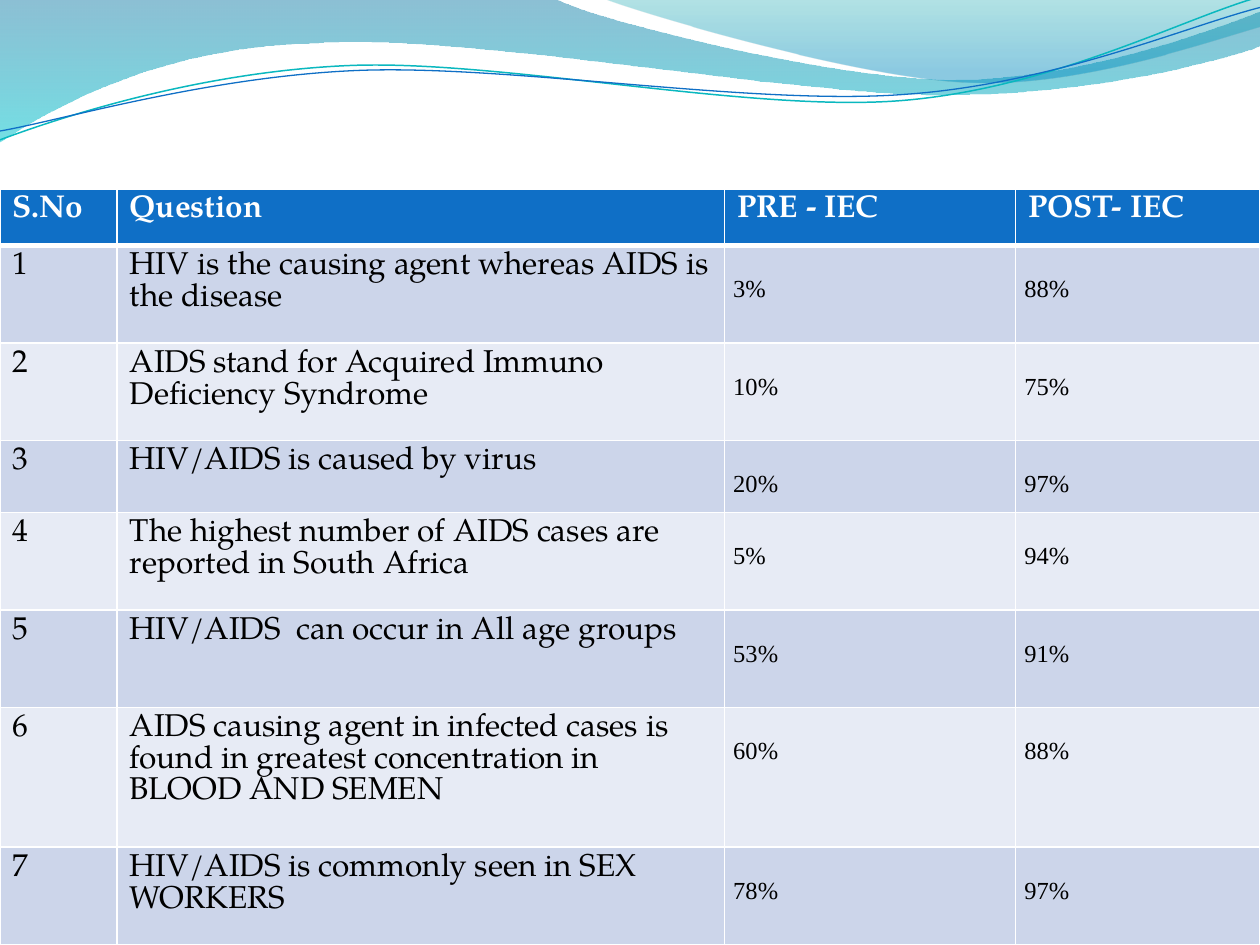
from math import cos, radians, sin

from lxml.etree import SubElement
from pptx import Presentation
from pptx.dml.color import RGBColor
from pptx.enum.text import MSO_ANCHOR
from pptx.oxml.ns import qn
from pptx.util import Inches, Pt

THEME = {
    "teal": "0AB8BF", "blue": "0F6FC6", "white": "FFFFFF", "black": "000000",
    "bands": ("E7EBF5", "CCD5EA"),
    "question_font": "TeX Gyre Pagella", "question_size": 18,
    "result_font": "Times New Roman", "result_size": 14,
}


def draw_curve(shapes, start, segments, close, center=(0, 0), tilt=0):
    coordinates = [start]
    for segment in segments:
        coordinates += zip(segment[::2], segment[1::2])
    cx, cy = center
    turn_cos, turn_sin = cos(radians(tilt)), sin(radians(tilt))
    corners = [(Inches(cx + (x - cx) * turn_cos + (y - cy) * turn_sin),
                Inches(cy - (x - cx) * turn_sin + (y - cy) * turn_cos))
               for x, y in coordinates]
    builder = shapes.build_freeform(*corners[0])
    builder.add_line_segments(corners[1:], close=close)
    curve = builder.convert_to_shape()
    curve.shadow.inherit = False
    curve.rotation = tilt
    steps = iter(list(curve._element.spPr.iter(qn("a:lnTo"))))
    for segment in segments:
        first = next(steps)
        if len(segment) == 6:
            first.tag = qn("a:cubicBezTo")
            for control in (next(steps), next(steps)):
                first.append(control[0])
                control.getparent().remove(control)
    return curve


def add_border(cell, side, width):
    border = SubElement(cell._tc.get_or_add_tcPr(), qn(f"a:{side}"), w=str(Pt(width)))
    paint = SubElement(border, qn("a:solidFill"))
    SubElement(paint, qn("a:srgbClr"), val=THEME["white"])


prs = Presentation()
prs.slide_width, prs.slide_height = Inches(10), Inches(7.5)
slide = prs.slides.add_slide(prs.slide_layouts[6])

waves = [
    ((0, 0),
     [(4.4, -0.01), (4.76, 0.17, 6.64, 0.63, 7.58, 0.63),
      (8.53, 0.63, 9.58, 0.26, 10, 0.09), (10.01, 0.36),
      (9.83, 0.44, 8.7, 0.76, 7.46, 0.75), (6.22, 0.75, 3.82, 0.28, 2.57, 0.34),
      (1.29, 0.36, 0.46, 0.83, -0.01, 1.13)],
     [(0, "0074A1", 45), (1, "00C6CF", 55)]),
    ((4.79, -0.01),
     [(5.09, 0.11, 6.82, 0.62, 7.69, 0.65), (8.56, 0.69, 9.61, 0.32, 10, 0.21), (10, 0)],
     [(0, "00A1A9", 30), (0.8, "008BBF", 45)]),
]
for start, segments, stops in waves:
    wave = draw_curve(slide.shapes, start, segments, True)
    wave.line.fill.background()
    wave.fill.gradient()
    wave.fill.gradient_angle = 270
    for stop, (position, color, _) in zip(wave.fill.gradient_stops, stops):
        stop.position = position
        stop.color.rgb = RGBColor.from_string(color)
    for tint, (_, _, opacity) in zip(wave._element.spPr.iter(qn("a:srgbClr")), stops):
        SubElement(tint, qn("a:alpha"), val=str(opacity * 1000))

strands = [
    ((0, 1.11),
     [(0.48, 0.93, 1.58, 0.57, 2.77, 0.52), (3.95, 0.47, 5.93, 0.89, 7.13, 0.8),
      (8.33, 0.71, 9.38, 0.15, 9.98, -0.02)], (4.99, 0.58), "teal", 0.85),
    ((0, 1.04),
     [(0.47, 0.96, 1.64, 0.61, 2.83, 0.56), (4.03, 0.51, 5.97, 0.84, 7.17, 0.75),
      (8.36, 0.67, 9.41, 0.21, 10, 0.06)], (5, 0.59), "blue", 0.75),
]
ribbon = slide.shapes.add_group_shape()
for start, segments, center, color, width in strands:
    strand = draw_curve(ribbon.shapes, start, segments, False, center, -2.7)
    strand.fill.background()
    strand.line.color.rgb = RGBColor.from_string(THEME[color])
    strand.line.width = Pt(width)

survey = [
    ("S.No", "Question", "PRE - IEC", "POST- IEC"),
    ("1", "HIV is the causing agent whereas AIDS is the disease", "3%", "88%"),
    ("2", "AIDS stand for Acquired Immuno Deficiency Syndrome", "10%", "75%"),
    ("3", "HIV/AIDS is caused by virus", "20%", "97%"),
    ("4", "The highest number of AIDS cases are reported in South Africa", "5%", "94%"),
    ("5", "HIV/AIDS  can occur in All age groups", "53%", "91%"),
    ("6", "AIDS causing agent in infected cases is found in greatest concentration "
          "in BLOOD AND SEMEN", "60%", "88%"),
    ("7", "HIV/AIDS is commonly seen in SEX WORKERS", "78%", "97%"),
]
column_widths = [0.93, 4.82, 2.31, 1.94]
special_heights = {0: 0.45, 3: 0.57, 6: 1.11}
common_height = (6 - sum(special_heights.values())) / (len(survey) - len(special_heights))
result_margins = {"margin_left": Inches(0.07), "margin_right": Inches(0.07),
                  "margin_top": Inches(0.21), "margin_bottom": 0}

table = slide.shapes.add_table(len(survey), len(column_widths), Inches(0), Inches(1.5),
                               Inches(10), Inches(6)).table
for column, width in zip(table.columns, column_widths):
    column.width = Inches(width)
for r, row in enumerate(table.rows):
    row.height = Inches(special_heights.get(r, common_height))

for r, answers in enumerate(survey):
    for c, wording in enumerate(answers):
        cell = table.cell(r, c)
        cell.text = wording
        cell.vertical_anchor = MSO_ANCHOR.TOP
        paragraph = cell.text_frame.paragraphs[0]
        header, result = r == 0, r > 0 and c > 1
        kind = "result" if result else "question"
        font_format = {"name": THEME[f"{kind}_font"], "size": Pt(THEME[f"{kind}_size"]),
                       "bold": header}
        font = paragraph.runs[0].font
        for key, value in font_format.items():
            setattr(font, key, value)
        font.color.rgb = RGBColor.from_string(THEME["white" if header else "black"])
        if result:
            paragraph.line_spacing = 1.15
            for key, value in result_margins.items():
                setattr(cell, key, value)
        for side, width in {"lnL": 1, "lnR": 1, "lnT": 3 if r == 1 else 1,
                            "lnB": 3 if header else 1}.items():
            add_border(cell, side, width)
        cell.fill.solid()
        cell.fill.fore_color.rgb = RGBColor.from_string(
            THEME["blue"] if header else THEME["bands"][r % 2])

prs.save("out.pptx")
